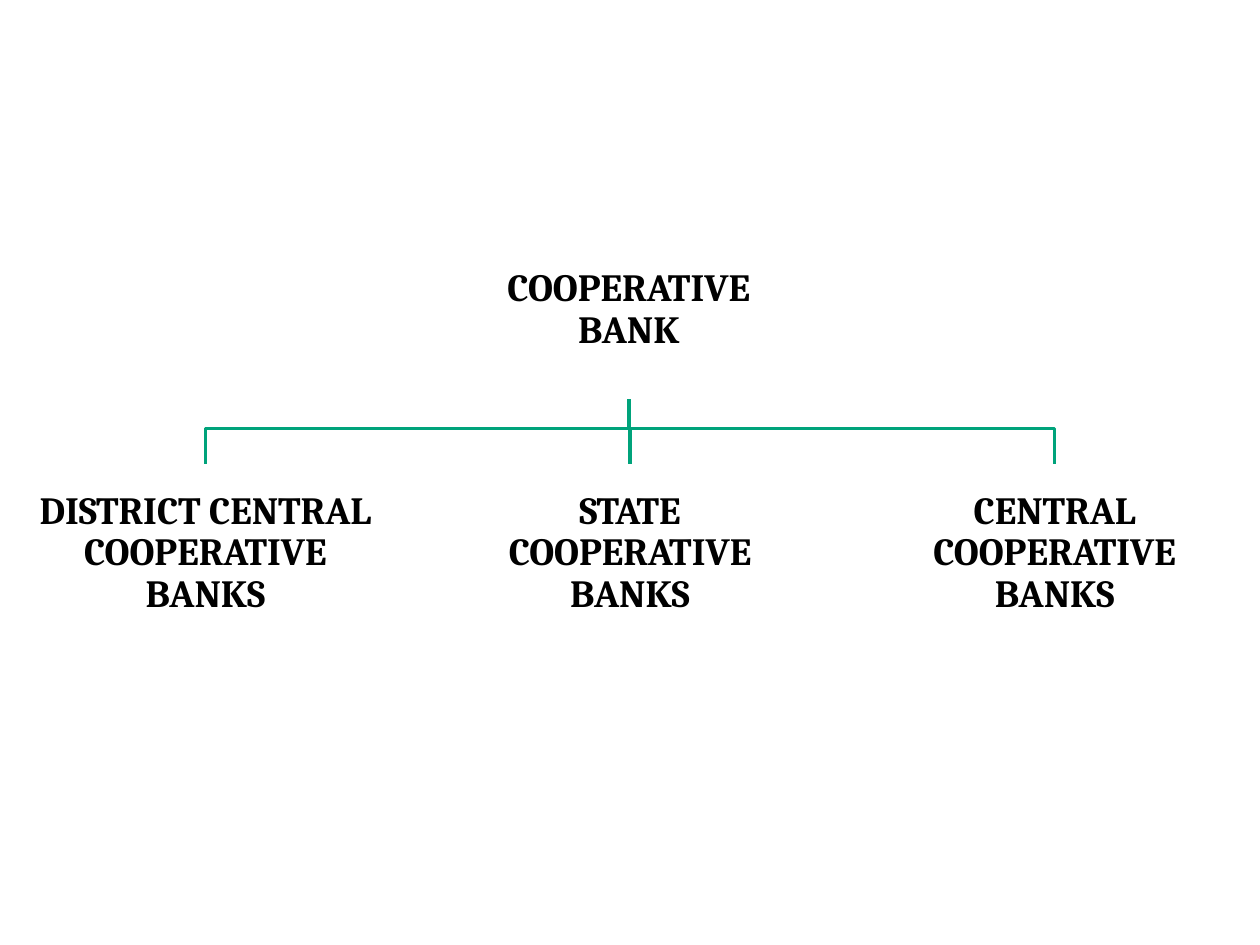
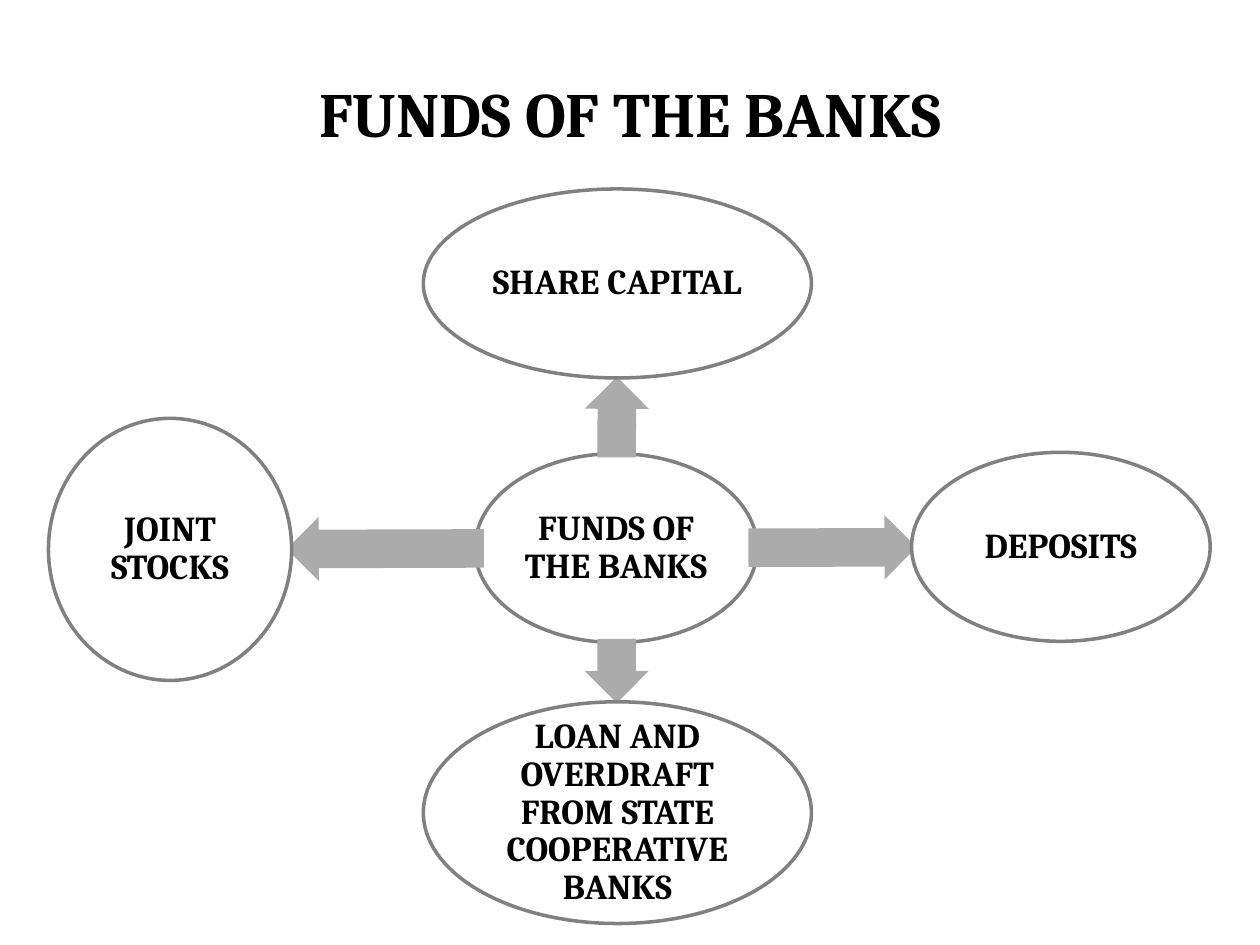
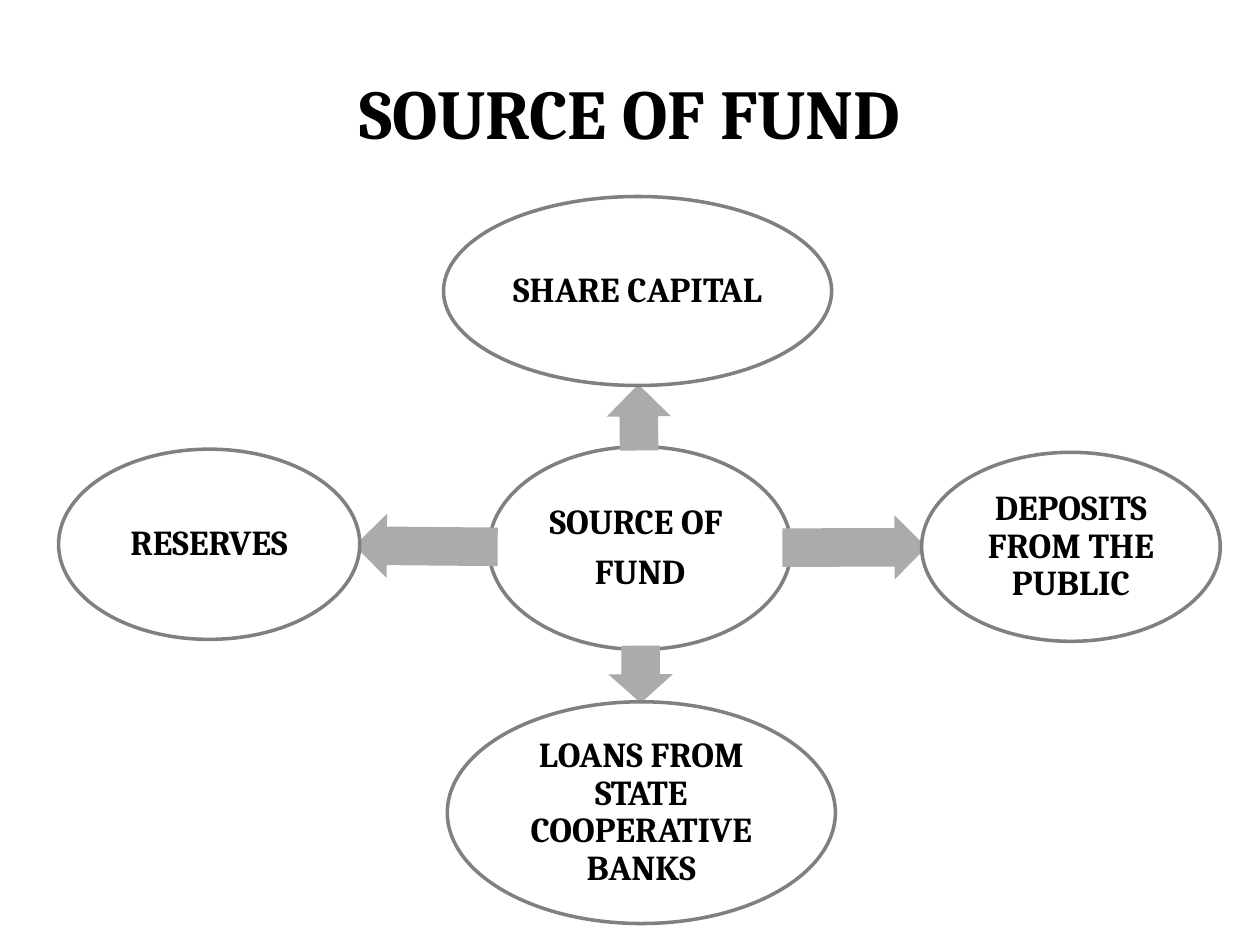
from math import atan2, degrees, hypot

from pptx import Presentation
from pptx.dml.color import RGBColor
from pptx.enum.shapes import MSO_SHAPE
from pptx.enum.text import MSO_ANCHOR, PP_ALIGN
from pptx.util import Inches, Pt

RECTANGLE, ELLIPSE, ARROW = MSO_SHAPE.RECTANGLE, MSO_SHAPE.OVAL, MSO_SHAPE.RIGHT_ARROW
CENTER, MIDDLE = PP_ALIGN.CENTER, MSO_ANCHOR.MIDDLE

# Shared look
SLIDE_WIDTH, SLIDE_HEIGHT = 10, 7.5
FONT = "Cambria"
BLACK, WHITE, GREEN = "000000", "FFFFFF", "00A37B"
OUTLINE_GRAY, ARROW_GRAY = "808080", "ABABAB"
LINE_WIDTH = 2
TITLE_AREA = (SLIDE_WIDTH / 2, 0.92, 9, 1.25)

# Bank hierarchy: boxes are placed by their centre
PARENT = "COOPERATIVE BANK"
CHILDREN = [
    "DISTRICT CENTRAL COOPERATIVE BANKS",
    "STATE COOPERATIVE BANKS",
    "CENTRAL COOPERATIVE BANKS",
]
BOX_WIDTH, BOX_HEIGHT = 2.79, 1.39
PARENT_X, PARENT_Y = 4.99, 2.46
CHILD_Y, CHILD_PITCH = 4.39, 3.37
BRANCH_Y = 3.4

# Hub diagrams: each ellipse is text lines, then centre x, centre y, width, height
HUB_SLIDES = [
    {
        "title": "FUNDS OF THE BANKS",
        "title_size": 36,
        "hub": (["FUNDS OF THE BANKS"], 4.89, 4.35, 2.24, 1.5),
        "spokes": [
            (["SHARE CAPITAL"], 4.9, 2.25, 3.08, 1.5),
            (["DEPOSITS"], 8.42, 4.34, 2.37, 1.5),
            (["LOAN AND OVERDRAFT FROM STATE COOPERATIVE BANKS"], 4.9, 6.45, 3.08, 1.76),
            (["JOINT STOCKS"], 1.35, 4.36, 1.93, 2.08),
        ],
    },
    {
        "title": "SOURCE OF FUND",
        "title_size": 40,
        "hub": (["SOURCE OF ", "FUND"], 5.08, 4.35, 2.4, 1.61),
        "spokes": [
            (["SHARE CAPITAL"], 5.06, 2.31, 3.08, 1.5),
            (["DEPOSITS FROM THE PUBLIC"], 8.5, 4.34, 2.37, 1.5),
            (["LOANS FROM STATE COOPERATIVE BANKS"], 5.09, 6.45, 3.08, 1.76),
            (["RESERVES"], 1.66, 4.32, 2.39, 1.51),
        ],
    },
]
ARROW_THICKNESS = 0.51
ARROW_ADJUSTMENTS = (0.6, 0.5)
# How far an arrow reaches into the hub and into the spoke
SIDE_OVERLAP, UPRIGHT_OVERLAP = (0.07, 0.04), (0.03, 0.01)


def color(hex_value):
    return RGBColor.from_string(hex_value)


def frame(center_x, center_y, width, height):
    """Turn a centre and a size into left, top, width, height."""
    corner = (center_x - width / 2, center_y - height / 2)
    return [Inches(value) for value in (*corner, width, height)]


def write(shape, lines, size, inset, line_spacing):
    text_frame = shape.text_frame
    settings = {"word_wrap": True, "vertical_anchor": MIDDLE}
    for side in ("left", "top", "right", "bottom"):
        settings["margin_" + side] = Inches(inset)
    for name, value in settings.items():
        setattr(text_frame, name, value)
    for index, line in enumerate(lines):
        paragraph = text_frame.add_paragraph() if index else text_frame.paragraphs[0]
        paragraph.text = line
        paragraph.alignment = CENTER
        paragraph.line_spacing = line_spacing
        if index:
            paragraph.space_before = Pt(size * 0.35)
        for name, value in {"name": FONT, "size": Pt(size), "bold": True}.items():
            setattr(paragraph.font, name, value)
        paragraph.font.color.rgb = color(BLACK)


def set_line(shape, line_color):
    shape.shadow.inherit = False
    shape.line.color.rgb = color(line_color)
    shape.line.width = Pt(LINE_WIDTH)


def add_label(slide, kind, area, lines, line_color, size, inset):
    shape = slide.shapes.add_shape(kind, *frame(*area))
    shape.fill.solid()
    shape.fill.fore_color.rgb = color(WHITE)
    set_line(shape, line_color)
    write(shape, lines, size, inset, 0.9)


def add_title(slide, text, size):
    write(slide.shapes.add_textbox(*frame(*TITLE_AREA)), [text], size, 0, 0.93)


def add_branch(slide, child_x):
    start_y, end_y = PARENT_Y + BOX_HEIGHT / 2, CHILD_Y - BOX_HEIGHT / 2
    route = [(PARENT_X, start_y), (PARENT_X, BRANCH_Y), (child_x, BRANCH_Y), (child_x, end_y)]
    # The builder rounds to whole units, so points go in as EMU
    start, *bends = [(Inches(x), Inches(y)) for x, y in route]
    builder = slide.shapes.build_freeform(*start)
    builder.add_line_segments(bends, close=False)
    branch = builder.convert_to_shape()
    branch.fill.background()
    set_line(branch, GREEN)


def add_arrow(slide, hub, spoke):
    """Point an arrow from the hub's rim to the spoke's rim, along their centres."""
    _, hub_x, hub_y, *hub_size = hub
    _, spoke_x, spoke_y, *spoke_size = spoke
    run, rise = spoke_x - hub_x, spoke_y - hub_y
    distance = hypot(run, rise)
    sideways = abs(run) > abs(rise)
    axis = 0 if sideways else 1
    hub_overlap, spoke_overlap = SIDE_OVERLAP if sideways else UPRIGHT_OVERLAP
    start = hub_size[axis] / 2 - hub_overlap
    end = distance - spoke_size[axis] / 2 + spoke_overlap
    share = (start + end) / 2 / distance
    area = (hub_x + run * share, hub_y + rise * share, end - start, ARROW_THICKNESS)
    arrow = slide.shapes.add_shape(ARROW, *frame(*area))
    arrow.rotation = degrees(atan2(rise, run)) % 360
    for index, value in enumerate(ARROW_ADJUSTMENTS):
        arrow.adjustments[index] = value
    arrow.shadow.inherit = False
    arrow.fill.solid()
    arrow.fill.fore_color.rgb = color(ARROW_GRAY)
    arrow.line.fill.background()


def build_hierarchy(slide):
    child_centers = [SLIDE_WIDTH / 2 + (column - 1) * CHILD_PITCH for column in range(len(CHILDREN))]
    for child_x in reversed(child_centers):
        add_branch(slide, child_x)
    boxes = [(PARENT, PARENT_X, PARENT_Y)]
    boxes += [(text, x, CHILD_Y) for text, x in zip(CHILDREN, child_centers)]
    for text, x, y in boxes:
        add_label(slide, RECTANGLE, (x, y, BOX_WIDTH, BOX_HEIGHT), [text], WHITE, 22, 0.02)


def build_hub(slide, content):
    add_title(slide, content["title"], content["title_size"])
    hub = content["hub"]
    for ellipse in [hub, *content["spokes"]]:
        lines, *area = ellipse
        if ellipse is not hub:
            add_arrow(slide, hub, ellipse)
        add_label(slide, ELLIPSE, area, lines, OUTLINE_GRAY, 20, 0.03)


def main():
    presentation = Presentation()
    presentation.slide_width = Inches(SLIDE_WIDTH)
    presentation.slide_height = Inches(SLIDE_HEIGHT)
    blank = presentation.slide_layouts[6]
    build_hierarchy(presentation.slides.add_slide(blank))
    for content in HUB_SLIDES:
        build_hub(presentation.slides.add_slide(blank), content)
    presentation.save("out.pptx")


if __name__ == "__main__":
    main()
